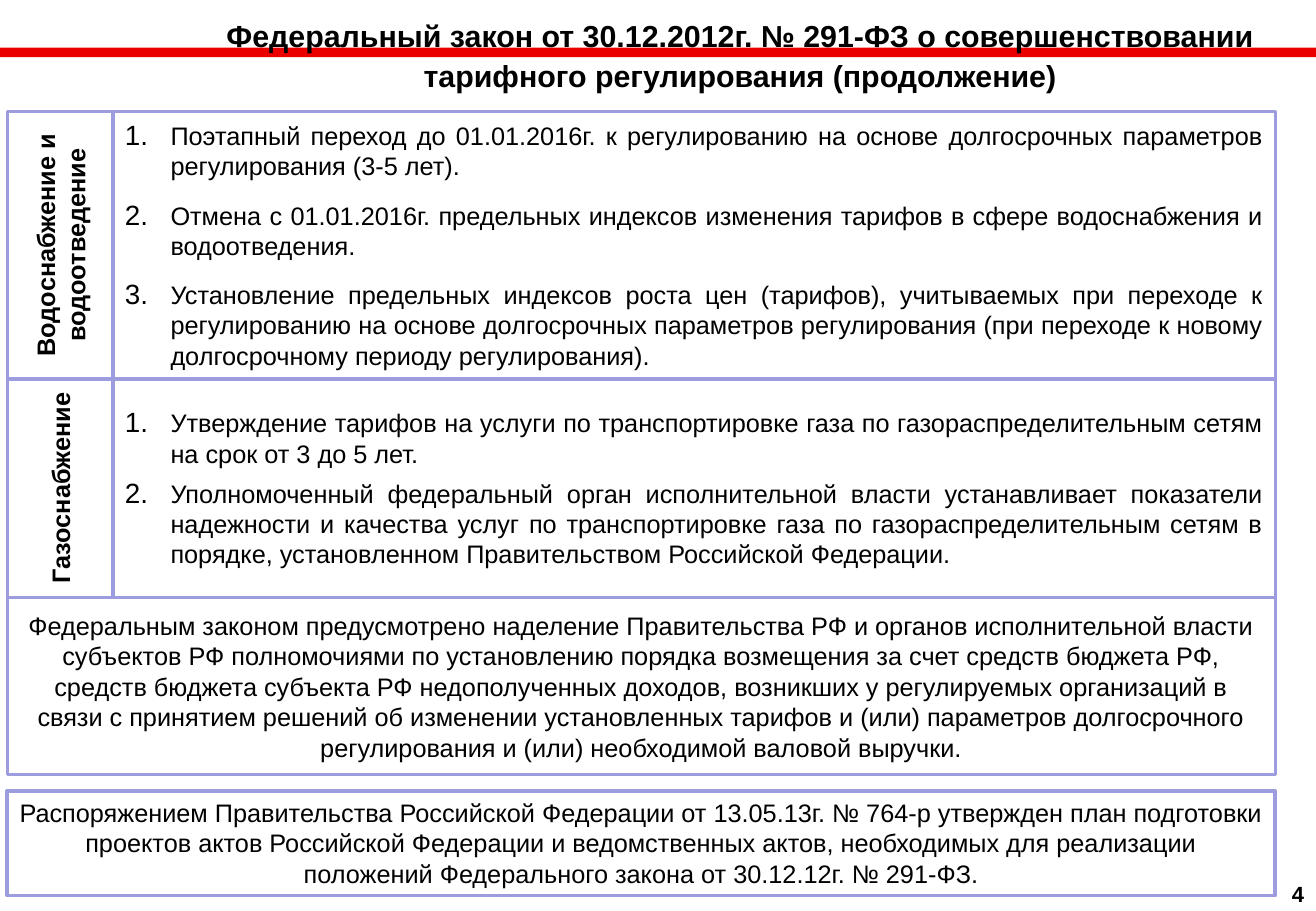
from lxml.etree import SubElement
from pptx import Presentation
from pptx.dml.color import RGBColor
from pptx.enum.shapes import MSO_SHAPE
from pptx.enum.text import MSO_ANCHOR, MSO_AUTO_SIZE, PP_ALIGN
from pptx.oxml.ns import qn
from pptx.util import Pt

SLIDE_WIDTH, SLIDE_HEIGHT = 780.13, 540
LEFT, LABEL_WIDTH, TABLE_WIDTH = 4.3, 62.7, 751.7
BLACK, WHITE, RED, LILAC = "000000", "FFFFFF", "EB0000", "9C9CDF"

# Each section: label, label inset, height, space after each item, items
SECTIONS = [
    ("Водоснабжение и водоотведение", 13.6, 158.4, (11.2, 11.2, 0), [
        "Поэтапный переход до 01.01.2016г. к регулированию на основе "
        "долгосрочных параметров регулирования (3-5 лет).",
        "Отмена с 01.01.2016г. предельных индексов изменения тарифов в сфере "
        "водоснабжения и водоотведения.",
        "Установление предельных индексов роста цен (тарифов), учитываемых при "
        "переходе к регулированию на основе долгосрочных параметров регулирования "
        "(при переходе к новому долгосрочному периоду регулирования).",
    ]),
    ("Газоснабжение", 7.2, 129.6, (5.6, 6), [
        "Утверждение тарифов на услуги по транспортировке газа по "
        "газораспределительным сетям на срок от 3 до 5 лет.",
        "Уполномоченный федеральный орган исполнительной власти устанавливает "
        "показатели надежности и качества услуг по транспортировке газа по "
        "газораспределительным сетям в порядке, установленном Правительством "
        "Российской Федерации.",
    ]),
]
COMPENSATION = (
    "Федеральным законом предусмотрено наделение Правительства РФ и органов "
    "исполнительной власти субъектов РФ полномочиями по установлению порядка "
    "возмещения за счет средств бюджета РФ, средств бюджета субъекта РФ "
    "недополученных доходов, возникших у регулируемых организаций в связи с "
    "принятием решений об изменении установленных тарифов и (или) параметров "
    "долгосрочного регулирования и (или) необходимой валовой выручки.")
ACTION_PLAN = (
    "Распоряжением Правительства Российской Федерации от 13.05.13г. № 764-р "
    "утвержден план подготовки проектов актов Российской Федерации и "
    "ведомственных актов, необходимых для реализации положений Федерального "
    "закона от 30.12.12г. № 291-ФЗ.")


def color(hex_value):
    return RGBColor.from_string(hex_value)


def add_box(slide, box, fill=None, line=None, line_width=2):
    frame = slide.shapes.add_shape(MSO_SHAPE.RECTANGLE, *map(Pt, box))
    frame.shadow.inherit = False
    if fill:
        frame.fill.solid()
        frame.fill.fore_color.rgb = color(fill)
    else:
        frame.fill.background()
    if line:
        frame.line.color.rgb = color(line)
        frame.line.width = Pt(line_width)
    else:
        frame.line.fill.background()
    return frame


def set_insets(text_frame, side=7.2, edge=3.6, anchor=MSO_ANCHOR.MIDDLE, wrap=True):
    text_frame.margin_left = text_frame.margin_right = Pt(side)
    text_frame.margin_top = text_frame.margin_bottom = Pt(edge)
    text_frame.vertical_anchor = anchor
    text_frame.word_wrap = wrap


def write(paragraph, text, size=15, bold=False, align=PP_ALIGN.CENTER):
    paragraph.alignment = align
    run = paragraph.add_run()
    run.text = text
    run.font.name = "Arial"
    run.font.size = Pt(size)
    run.font.bold = bold
    run.font.color.rgb = color(BLACK)


def number_item(paragraph):
    properties = paragraph._p.get_or_add_pPr()
    properties.set("marL", str(Pt(27)))
    properties.set("indent", str(-Pt(27)))
    SubElement(properties, qn("a:buSzPct"), val="110000")
    SubElement(properties, qn("a:buFont"), typeface="+mj-lt")
    SubElement(properties, qn("a:buAutoNum"), type="arabicPeriod")


def add_header(slide, box):
    left, top, width, height = box
    # Red band across the slide, behind the title
    add_box(slide, (0, top + 24, SLIDE_WIDTH, 5.7), fill=RED)
    title = slide.shapes.add_textbox(*map(Pt, box)).text_frame
    set_insets(title, anchor=MSO_ANCHOR.TOP)
    title.paragraphs[0].line_spacing = 1.1
    write(title.paragraphs[0], "Федеральный закон от 30.12.2012г. № 291-ФЗ о "
          "совершенствовании тарифного регулирования (продолжение)", 18, True)


def add_section(slide, box, label, label_inset, spaces_after, items):
    left, top, width, height = box
    # Rotated section label
    heading = add_box(slide, (left, top, LABEL_WIDTH, height), line=LILAC).text_frame
    set_insets(heading, label_inset, label_inset / 2)
    heading._txBody.bodyPr.set("vert", "vert270")
    write(heading.paragraphs[0], label, bold=True)
    # Numbered provisions
    provisions = add_box(
        slide, (left + LABEL_WIDTH, top, width - LABEL_WIDTH, height),
        fill=WHITE, line=LILAC).text_frame
    set_insets(provisions)
    for index, (item, space_after) in enumerate(zip(items, spaces_after)):
        paragraph = provisions.add_paragraph() if index else provisions.paragraphs[0]
        number_item(paragraph)
        paragraph.space_after = Pt(space_after)
        write(paragraph, item, align=PP_ALIGN.JUSTIFY)


def add_note(slide, box, text, line_width=2, anchor=MSO_ANCHOR.MIDDLE):
    note = add_box(slide, box, line=LILAC, line_width=line_width).text_frame
    set_insets(note, anchor=anchor)
    write(note.paragraphs[0], text)
    return note


def add_page_number(slide, box):
    page_number = slide.shapes.add_textbox(*map(Pt, box)).text_frame
    set_insets(page_number, anchor=MSO_ANCHOR.TOP, wrap=False)
    page_number.auto_size = MSO_AUTO_SIZE.SHAPE_TO_FIT_TEXT
    write(page_number.paragraphs[0], "4", 13, True)


def main():
    presentation = Presentation()
    presentation.slide_width = Pt(SLIDE_WIDTH)
    presentation.slide_height = Pt(SLIDE_HEIGHT)
    slide = presentation.slides.add_slide(presentation.slide_layouts[6])

    add_header(slide, (97.5, 4.2, 682.5, 77.8))
    top = 66.2
    for label, label_inset, height, spaces_after, items in SECTIONS:
        add_section(slide, (LEFT, top, TABLE_WIDTH, height),
                    label, label_inset, spaces_after, items)
        top += height
    add_note(slide, (LEFT, top, TABLE_WIDTH, 105.1), COMPENSATION)
    action_plan = add_note(slide, (LEFT, 468.9, TABLE_WIDTH, 61.9), ACTION_PLAN,
                           2.25, MSO_ANCHOR.TOP)
    action_plan.auto_size = MSO_AUTO_SIZE.SHAPE_TO_FIT_TEXT
    add_page_number(slide, (758.2, 518.4, 22.3, 23))
    presentation.save("out.pptx")


if __name__ == "__main__":
    main()
